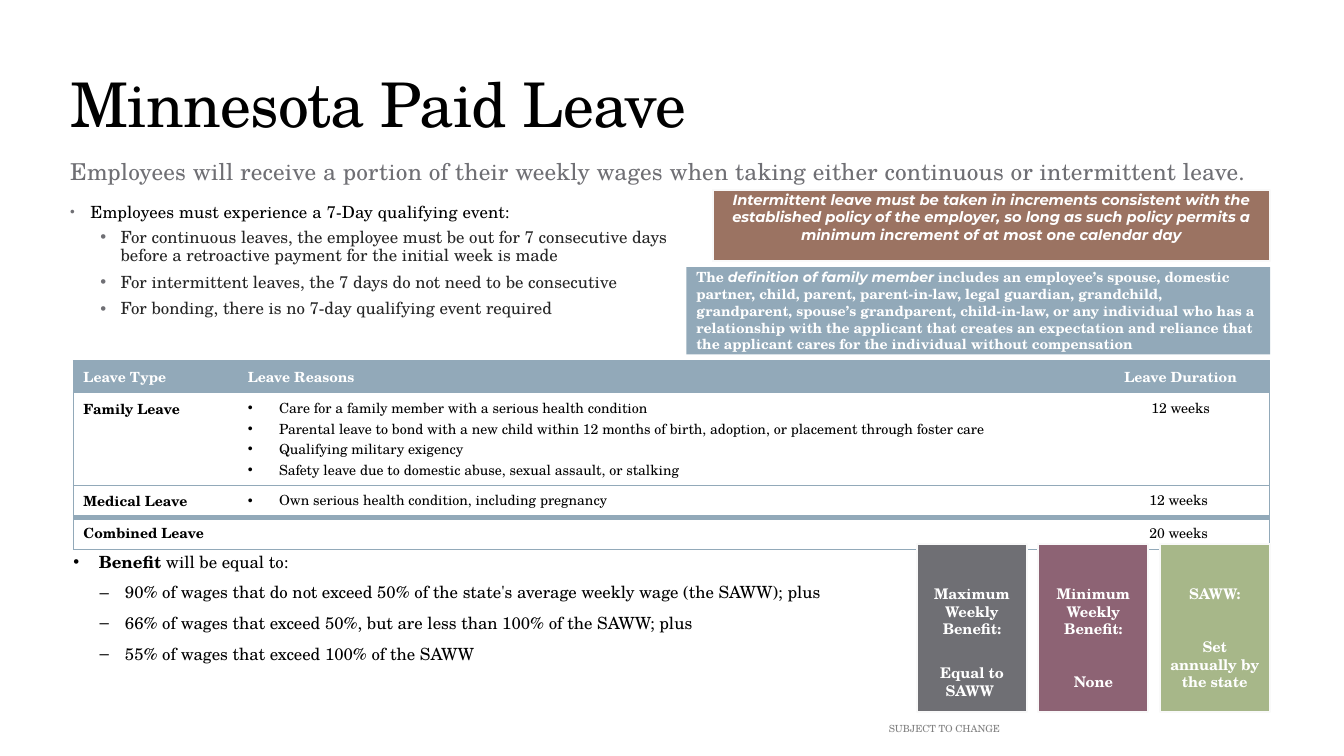
from lxml import etree
from pptx import Presentation
from pptx.dml.color import RGBColor
from pptx.enum.shapes import MSO_SHAPE
from pptx.enum.text import MSO_ANCHOR, MSO_AUTO_SIZE, PP_ALIGN
from pptx.oxml.ns import qn
from pptx.util import Cm, Pt

RECT = MSO_SHAPE.RECTANGLE
TOP, MIDDLE, BOTTOM = MSO_ANCHOR.TOP, MSO_ANCHOR.MIDDLE, MSO_ANCHOR.BOTTOM
LEFT, CENTER, RIGHT = PP_ALIGN.LEFT, PP_ALIGN.CENTER, PP_ALIGN.RIGHT
FIXED = MSO_AUTO_SIZE.NONE
SERIF, SANS = "TeX Gyre Schola", "Montserrat"
BLUE, GRAY, BLACK, WHITE = "92A9B9", "6F6F74", "000000", "FFFFFF"
PAD = (0.25, 0.13, 0.25, 0.13)


def paint(color):
    return RGBColor.from_string(color)


def child(parent, tag, **attrs):
    return etree.SubElement(parent, qn(tag), **attrs)


class Board:
    def __init__(self, deck):
        self.slide = deck.slides.add_slide(deck.slide_layouts[5])

    def font(self, run, size, color, bold=False, italic=False, name=SERIF, track=0):
        font = run.font
        font.name, font.size = name, Pt(size)
        font.bold, font.italic = bold, italic
        font.color.rgb = paint(color)
        if track:
            run._r.get_or_add_rPr().set("spc", str(track))

    def frame(self, frame, pad=PAD, anchor=TOP):
        frame.auto_size = FIXED
        frame.word_wrap = True
        frame.vertical_anchor = anchor
        sides = [Cm(side) for side in pad]
        frame.margin_left, frame.margin_top, frame.margin_right, frame.margin_bottom = sides

    def bullet(self, par, mark, indent, hang, color=None, scale=None):
        props = par._p.get_or_add_pPr()
        props.set("marL", str(Cm(indent)))
        props.set("indent", str(-Cm(hang)))
        if color:
            child(child(props, "a:buClr"), "a:srgbClr", val=color)
        if scale:
            child(props, "a:buSzPct", val=str(scale * 1000))
        child(props, "a:buFont", typeface="Arial")
        child(props, "a:buChar", char=mark)

    def par(self, frame, text, size, color, first=False, align=LEFT, space=1,
            before=0, after=0, level=0, mark=None, **style):
        par = frame.paragraphs[0] if first else frame.add_paragraph()
        par.text = text
        par.level = level
        par.alignment, par.line_spacing = align, float(space)
        par.space_before, par.space_after = Pt(0 if first else before), Pt(after)
        if mark:
            self.bullet(par, *mark)
        if not text:
            child(par._p, "a:endParaRPr", sz=str(size * 100))
        for run in par.runs:
            self.font(run, size, color, **style)
        return par

    def title(self, box, text):
        shape = self.slide.shapes.title
        shape.left, shape.top, shape.width, shape.height = [Cm(n) for n in box]
        self.frame(shape.text_frame, anchor=BOTTOM)
        self.par(shape.text_frame, text, 44, BLACK, True, space=0.9, track=-50)

    def text(self, box, pad=PAD):
        shape = self.slide.shapes.add_textbox(*[Cm(n) for n in box])
        self.frame(shape.text_frame, pad)
        return shape.text_frame

    def block(self, box, fill, pad=PAD, anchor=TOP, edge=True):
        shape = self.slide.shapes.add_shape(RECT, *[Cm(n) for n in box])
        shape.shadow.inherit = False
        shape.fill.solid()
        shape.fill.fore_color.rgb = paint(fill)
        if edge:
            shape.line.color.rgb = paint("F9F9F9")
            shape.line.width = Pt(1.35)
        else:
            shape.line.fill.background()
        self.frame(shape.text_frame, pad, anchor)
        return shape.text_frame

    def border(self, cell, widths):
        props = cell._tc.get_or_add_tcPr()
        for side, width in zip("LRTB", widths):
            line = child(props, "a:ln" + side, w=str(Pt(width)))
            if width:
                child(child(line, "a:solidFill"), "a:srgbClr", val=BLUE)
                child(line, "a:prstDash", val="solid")
            else:
                child(line, "a:noFill")

    def table(self, box, cols, rows, rules, data):
        shape = self.slide.shapes.add_table(len(rows), len(cols), *[Cm(n) for n in box])
        table = shape.table
        table.first_row = table.horz_banding = False
        for col, width in zip(table.columns, cols):
            col.width = Cm(width)
        for row, height in zip(table.rows, rows):
            row.height = Cm(height)
        last = len(cols) - 1
        for r, line in enumerate(data):
            for c, lines in enumerate(line):
                cell = table.cell(r, c)
                self.border(cell, (0 if c else 0.75, 0.75 if c == last else 0,
                                   rules[r], rules[r + 1]))
                cell.fill.solid()
                cell.fill.fore_color.rgb = paint(WHITE if r else BLUE)
                mark = ("•", 0.79, 0.79) if r and c == 1 and lines[0] else None
                for i, text in enumerate(lines):
                    self.par(cell.text_frame, text, 10, BLACK if r else WHITE, i == 0,
                             align=CENTER if c == last else LEFT,
                             mark=mark, bold=r == 0 or c == 0)


def main():
    deck = Presentation()
    deck.slide_width, deck.slide_height = Cm(33.87), Cm(19.05)
    board = Board(deck)

    board.title((1.52, 0.64, 30.48, 3.05), "Minnesota Paid Leave")
    board.par(board.text((1.52, 3.94, 30.48, 1.52)),
              "Employees will receive a portion of their weekly wages when taking either "
              "continuous or intermittent leave.",
              16.6, GRAY, True, space=0.85, track=17)

    event = board.text((1.52, 4.98, 15.77, 4.83))
    board.par(event, "Employees must experience a 7-Day qualifying event:", 12, BLACK, True,
              space=0.95, after=2, mark=("•", 0.51, 0.51, GRAY, 80), track=10)
    for text in (
        "For continuous leaves, the employee must be out for 7 consecutive days before a "
        "retroactive payment for the initial week is made",
        "For intermittent leaves, the 7 days do not need to be consecutive",
        "For bonding, there is no 7-day qualifying event required",
    ):
        board.par(event, text, 12, "262626", space=0.9, before=3, after=3, level=1,
                  mark=("•", 1.27, 0.51, GRAY))

    board.table(
        (1.85, 9.09, 30.15, 4.75), (4.14, 21.51, 4.5), (0.81, 2.32, 0.81, 0.81),
        (0.75, 0.75, 0.75, 4, 0.75),
        (
            (["Leave Type"], ["Leave Reasons"], ["Leave Duration"]),
            (["Family Leave"],
             ["Care for a family member with a serious health condition",
              "Parental leave to bond with a new child within 12 months of birth, adoption, "
              "or placement through foster care",
              "Qualifying military exigency",
              "Safety leave due to domestic abuse, sexual assault, or stalking"],
             ["12 weeks"]),
            (["Medical Leave"], ["Own serious health condition, including pregnancy"],
             ["12 weeks "]),
            (["Combined Leave"], [""], ["20 weeks "]),
        ))

    family = board.block((17.3, 6.73, 14.71, 2.2), BLUE, anchor=MIDDLE, edge=False)
    par = board.par(family, "The ", 10, WHITE, True, bold=True)
    for text, name in (
        ("definition of family member ", SANS),
        ("includes an employee’s spouse, domestic partner, child, parent, parent-in-law, "
         "legal guardian, grandchild, grandparent, spouse’s grandparent, child-in-law, or "
         "any individual who has a relationship with the applicant that creates an "
         "expectation and reliance that the applicant cares for the individual without "
         "compensation", SERIF),
    ):
        run = par.add_run()
        run.text = text
        board.font(run, 10, WHITE, bold=True, italic=name == SANS, name=name)

    gain = board.text((1.85, 13.72, 21.23, 3.23), (0, 0.13, 0, 0.13))
    par = board.par(gain, "Benefit", 12, BLACK, True, space=1.1, after=6, level=1,
                    mark=("•", 0.64, 0.64), bold=True)
    run = par.add_run()
    run.text = " will be equal to:"
    board.font(run, 12, BLACK)
    for text in (
        "90% of wages that do not exceed 50% of the state's average weekly wage "
        "(the SAWW); plus",
        "66% of wages that exceed 50%, but are less than 100% of the SAWW; plus",
        "55% of wages that exceed 100% of the SAWW",
    ):
        board.par(gain, text, 12, BLACK, space=1.1, after=6, level=1,
                  mark=("–", 1.3, 0.64))

    cards = (
        (GRAY, "Maximum Weekly Benefit:", "Equal to SAWW ", 18.6),
        ("8D6374", "Minimum Weekly Benefit:", "None", 25.2),
        ("A7B789", "SAWW:", "Set annually by the state", 25.2),
    )
    for i, (fill, head, value, gap) in enumerate(cards):
        card = board.block((23.11 + i * 3.06, 13.72, 2.77, 4.22), fill,
                           (0.25, 1.02, 0.25, 0.13))
        board.par(card, head, 10.5, WHITE, True, align=CENTER, bold=True)
        board.par(card, value, 10.5, WHITE, align=CENTER, before=gap, bold=True)

    policy = board.block((17.96, 4.8, 14.05, 1.78), "9B7362", (0.25, 0, 0.25, 0))
    board.par(policy, "Intermittent leave must be taken in increments consistent with the "
              "established policy of the employer, so long as such policy permits a minimum "
              "increment of at most one calendar day",
              10.5, WHITE, True, align=CENTER, bold=True, italic=True, name=SANS)

    board.par(board.text((19.61, 18.08, 5.84, 0.56)), "SUBJECT TO CHANGE", 7, "808080",
              True, align=RIGHT)

    deck.save("out.pptx")


if __name__ == "__main__":
    main()
